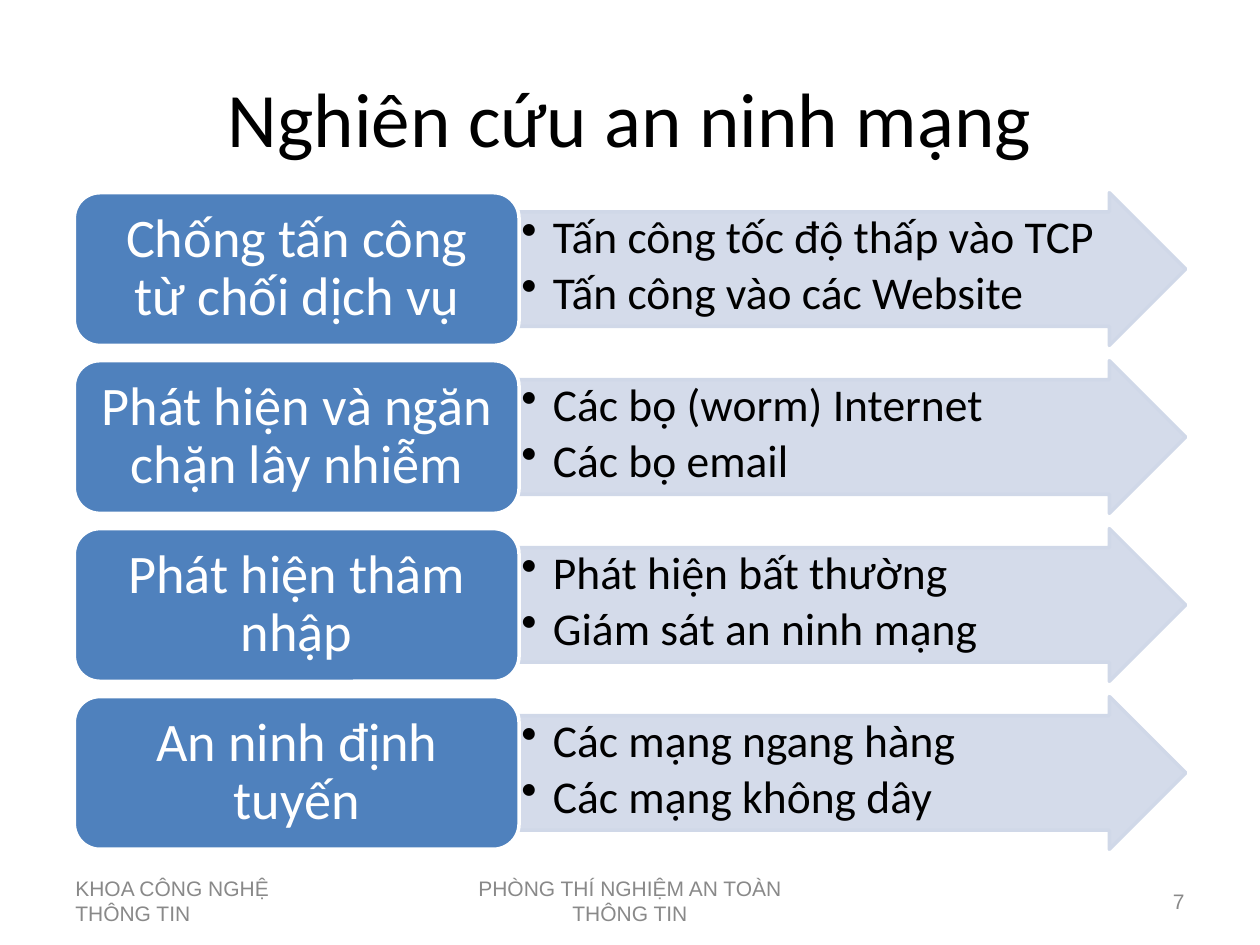
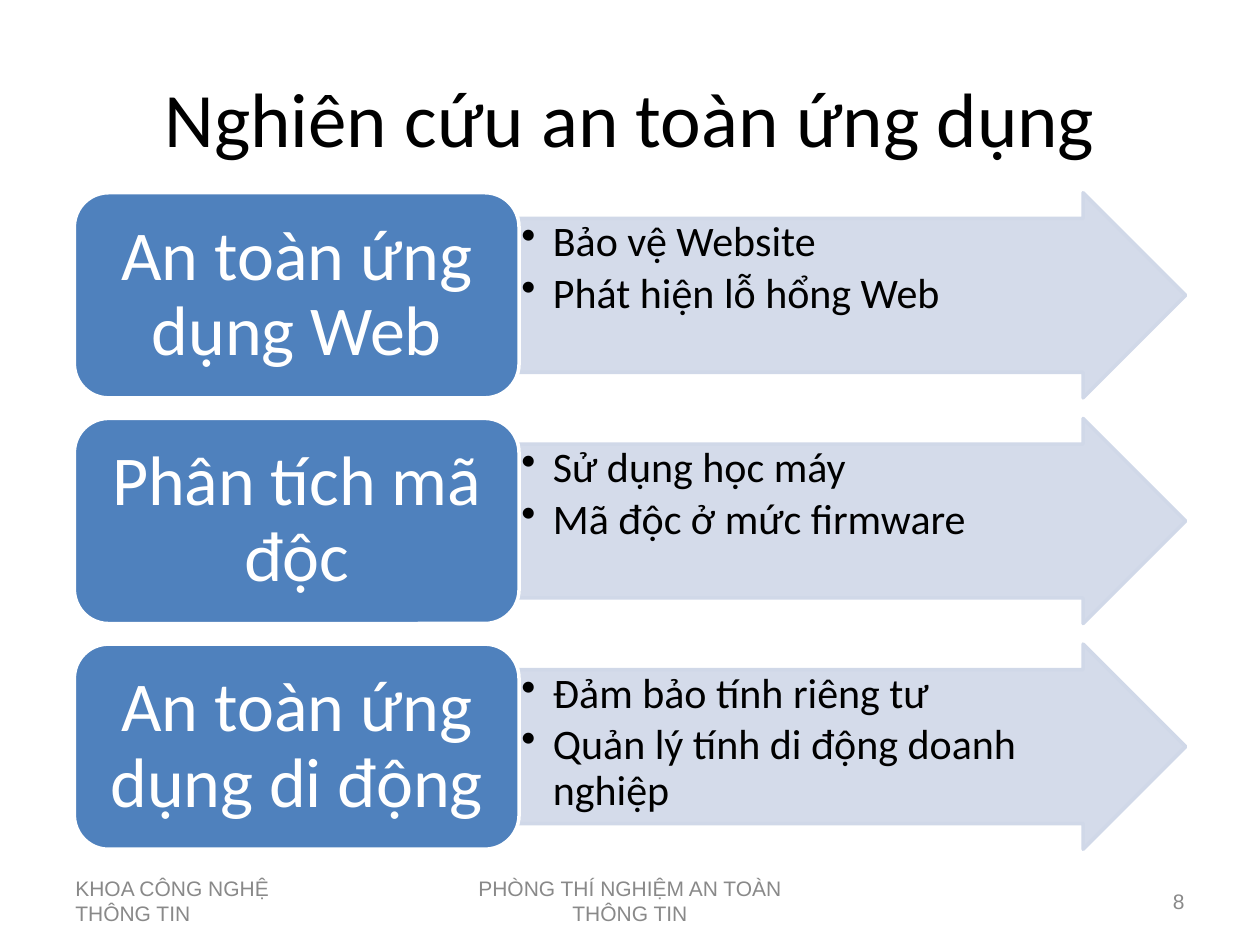
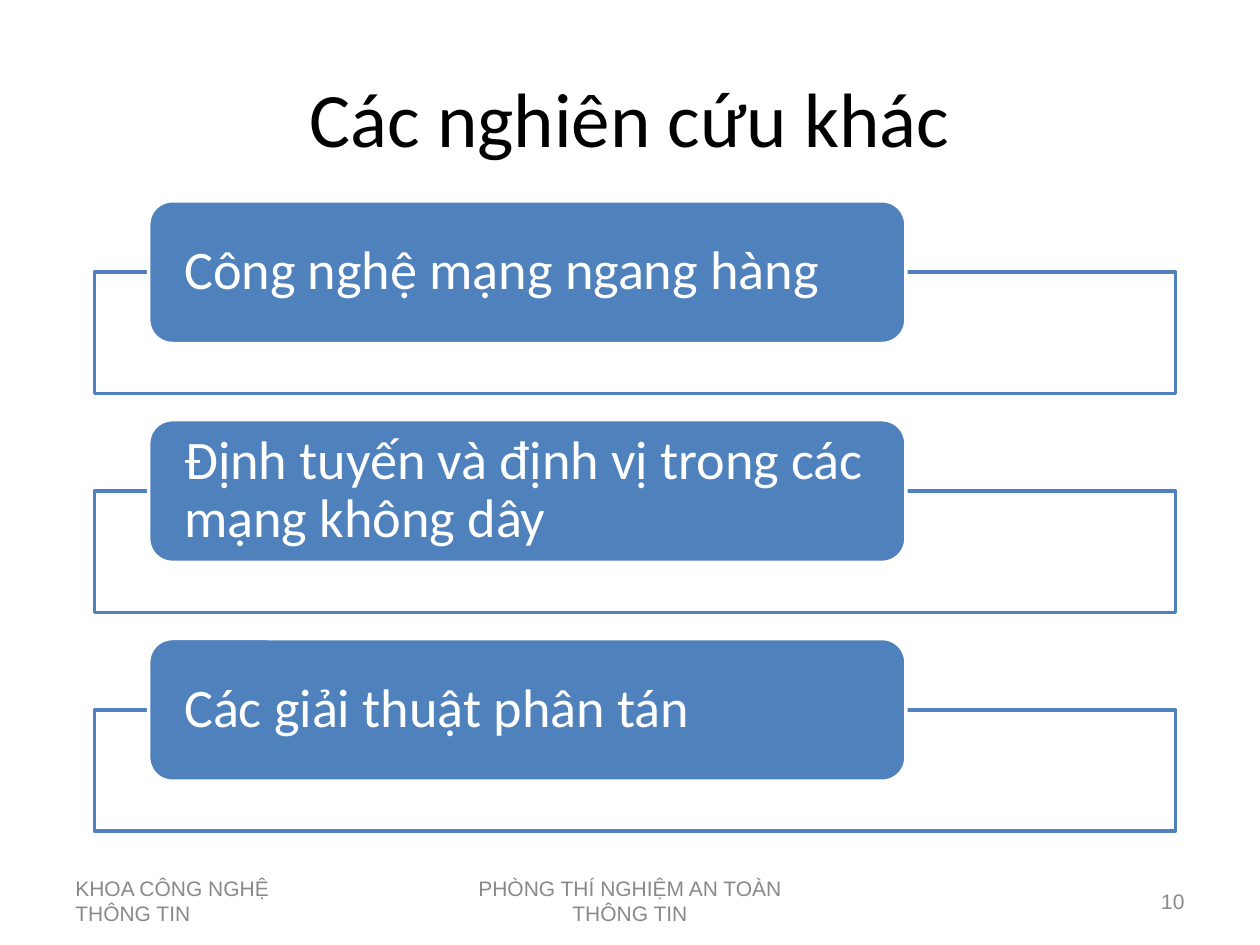
"""Build three slides on network and application security research."""
import dataclasses

import lxml.etree
import pptx
import pptx.dml.color
import pptx.enum.shapes
import pptx.enum.text
import pptx.oxml.ns
import pptx.util

ALIGN = pptx.enum.text.PP_ALIGN
ANCHOR = pptx.enum.text.MSO_ANCHOR
SHAPE = pptx.enum.shapes.MSO_SHAPE
Pt = pptx.util.Pt
Inches = pptx.util.Inches
WIDTH = Inches(10)
HEIGHT = Inches(7.5)


@dataclasses.dataclass(frozen=True)
class Theme:
    """Colours, fonts and type sizes shared by the slides."""
    blue: str = "4F81BD"
    pale: str = "D0D8E8"
    white: str = "FFFFFF"
    black: str = "000000"
    grey: str = "898989"
    font: str = "Calibri"
    footer_font: str = "Arial"
    title_size: int = 44
    footer_size: int = 12
    heading_size: int = 31
    outline: int = 2


THEME = Theme()

NETWORK_TOPICS = [
    ("Chống tấn công từ chối dịch vụ",
     ["Tấn công tốc độ thấp vào TCP", "Tấn công vào các Website"]),
    ("Phát hiện và ngăn chặn lây nhiễm",
     ["Các bọ (worm) Internet", "Các bọ email"]),
    ("Phát hiện thâm nhập",
     ["Phát hiện bất thường", "Giám sát an ninh mạng"]),
    ("An ninh định tuyến",
     ["Các mạng ngang hàng", "Các mạng không dây"]),
]
APPLICATION_TOPICS = [
    ("An toàn ứng dụng Web", ["Bảo vệ Website", "Phát hiện lỗ hổng Web"]),
    ("Phân tích mã độc", ["Sử dụng học máy", "Mã độc ở mức firmware"]),
    ("An toàn ứng dụng di động",
     ["Đảm bảo tính riêng tư", "Quản lý tính di động doanh nghiệp"]),
]
OTHER_TOPICS = [
    "Công nghệ mạng ngang hàng",
    "Định tuyến và định vị trong các mạng không dây",
    "Các giải thuật phân tán",
]


def area(left, top, width, height):
    """Turn percentages of the slide into a position and size."""
    return (int(WIDTH * left / 100), int(HEIGHT * top / 100),
            int(WIDTH * width / 100), int(HEIGHT * height / 100))


def rgb(colour):
    """Return the colour object for a hex string."""
    return pptx.dml.color.RGBColor.from_string(colour)


def add_child(parent, tag, **attributes):
    """Append a DrawingML element."""
    return lxml.etree.SubElement(parent, pptx.oxml.ns.qn(tag), attributes)


def add_span(para, text, size, colour, font=THEME.font):
    """Add one formatted run to a paragraph."""
    span = para.add_run()
    span.text = text
    span.font.size = Pt(size)
    span.font.name = font
    span.font.color.rgb = rgb(colour)


def space_lines(para, after):
    """Set tight lines and a percentage gap after the paragraph."""
    para.line_spacing = 0.9
    para.space_after = Pt(0)
    gap = para._p.pPr.find(pptx.oxml.ns.qn("a:spcAft"))
    gap.remove(gap[0])
    add_child(gap, "a:spcPct", val=str(after * 1000))


def add_bullet(para):
    """Give a paragraph a hanging bullet."""
    properties = para._p.get_or_add_pPr()
    properties.set("marL", str(Inches(0.25)))
    properties.set("indent", str(-Inches(0.25)))
    add_child(properties, "a:buChar", char="•")


def set_frame(box, anchor, across, down):
    """Wrap the text of a shape and set its anchor and margins in points."""
    frame = box.text_frame
    frame.word_wrap = True
    frame.vertical_anchor = anchor
    frame.margin_left = frame.margin_right = Pt(across)
    frame.margin_top = frame.margin_bottom = Pt(down)
    return frame


def add_block(page, kind, place, fill, line, opacity=100):
    """Add a filled and outlined preset shape."""
    box = page.shapes.add_shape(kind, *area(*place))
    box.shadow.inherit = False
    box.fill.solid()
    box.fill.fore_color.rgb = rgb(fill)
    box.line.color.rgb = rgb(line)
    box.line.width = Pt(THEME.outline)
    if opacity < 100:
        colour = box.fill._xPr.find(".//" + pptx.oxml.ns.qn("a:srgbClr"))
        add_child(colour, "a:alpha", val=str(opacity * 1000))
    return box


def add_heading(page, place, text, size, align, across, down):
    """Add a blue rounded box with a heading."""
    box = add_block(page, SHAPE.ROUNDED_RECTANGLE, place,
                    THEME.blue, THEME.white)
    para = set_frame(box, ANCHOR.MIDDLE, across, down).paragraphs[0]
    para.alignment = align
    space_lines(para, 35)
    add_span(para, text, size, THEME.white)


def add_arrow(page, place, items, size):
    """Add a pale arrow holding a bulleted list."""
    box = add_block(page, SHAPE.RIGHT_ARROW, place,
                    THEME.pale, THEME.pale, opacity=90)
    box.adjustments[0] = 0.75
    box.adjustments[1] = 0.5
    frame = set_frame(box, ANCHOR.TOP, 1.3, 1.3)
    for index, item in enumerate(items):
        para = frame.add_paragraph() if index else frame.paragraphs[0]
        para.alignment = ALIGN.LEFT
        para.level = 1
        space_lines(para, 15)
        add_bullet(para)
        add_span(para, item, size, THEME.black)


def add_footers(page, number):
    """Add the faculty, laboratory and page number."""
    footers = [
        (5, 23.33, "KHOA CÔNG NGHỆ THÔNG TIN", ALIGN.LEFT),
        (34.17, 31.67, "PHÒNG THÍ NGHIỆM AN TOÀN THÔNG TIN", ALIGN.CENTER),
        (71.67, 23.33, str(number), ALIGN.RIGHT),
    ]
    for left, width, text, align in footers:
        box = page.shapes.add_textbox(*area(left, 92.67, width, 5.33))
        para = set_frame(box, ANCHOR.MIDDLE, 7.2, 3.6).paragraphs[0]
        para.alignment = align
        add_span(para, text, THEME.footer_size, THEME.grey, THEME.footer_font)


def add_page(deck, title, number):
    """Add a slide with its title and footers."""
    page = deck.slides.add_slide(deck.slide_layouts[5])
    box = page.shapes.title
    box.left, box.top, box.width, box.height = area(5, 4, 90, 16.67)
    para = set_frame(box, ANCHOR.MIDDLE, 7.2, 3.6).paragraphs[0]
    para.alignment = ALIGN.CENTER
    add_span(para, title, THEME.title_size, THEME.black)
    add_footers(page, number)
    return page


def add_topic_rows(page, topics, heading_size, item_size):
    """Fill the body with heading and arrow rows, a tenth of a row apart."""
    top, total = 20.4, 69.47
    height = total / (len(topics) * 1.1 - 0.1)
    for row, (heading, items) in enumerate(topics):
        row_top = top + row * height * 1.1
        add_arrow(page, (41.2, row_top, 52.9, height), items, item_size)
        add_heading(page, (5.9, row_top, 35.3, height), heading, heading_size,
                    ALIGN.CENTER, heading_size * 0.3, heading_size * 0.15)


def add_framed_rows(page, headings):
    """Add open frames with a heading centred on each top edge."""
    top, pitch, frame_height, heading_height = 28.8, 23.16, 12.85, 15.1
    for row, heading in enumerate(headings):
        row_top = top + row * pitch
        add_block(page, SHAPE.RECTANGLE, (7.5, row_top, 85.8, frame_height),
                  THEME.white, THEME.blue, opacity=90)
        place = (11.8, row_top - heading_height / 2, 60.1, heading_height)
        add_heading(page, place, heading, THEME.heading_size,
                    ALIGN.LEFT, 16.3, 0)


def main():
    """Build and save the deck."""
    deck = pptx.Presentation()
    deck.slide_width, deck.slide_height = WIDTH, HEIGHT
    page = add_page(deck, "Nghiên cứu an ninh mạng", 7)
    add_topic_rows(page, NETWORK_TOPICS, THEME.heading_size, 26)
    page = add_page(deck, "Nghiên cứu an toàn ứng dụng", 8)
    add_topic_rows(page, APPLICATION_TOPICS, 40, 24)
    page = add_page(deck, "Các nghiên cứu khác", 10)
    add_framed_rows(page, OTHER_TOPICS)
    deck.save("out.pptx")


if __name__ == "__main__":
    main()
